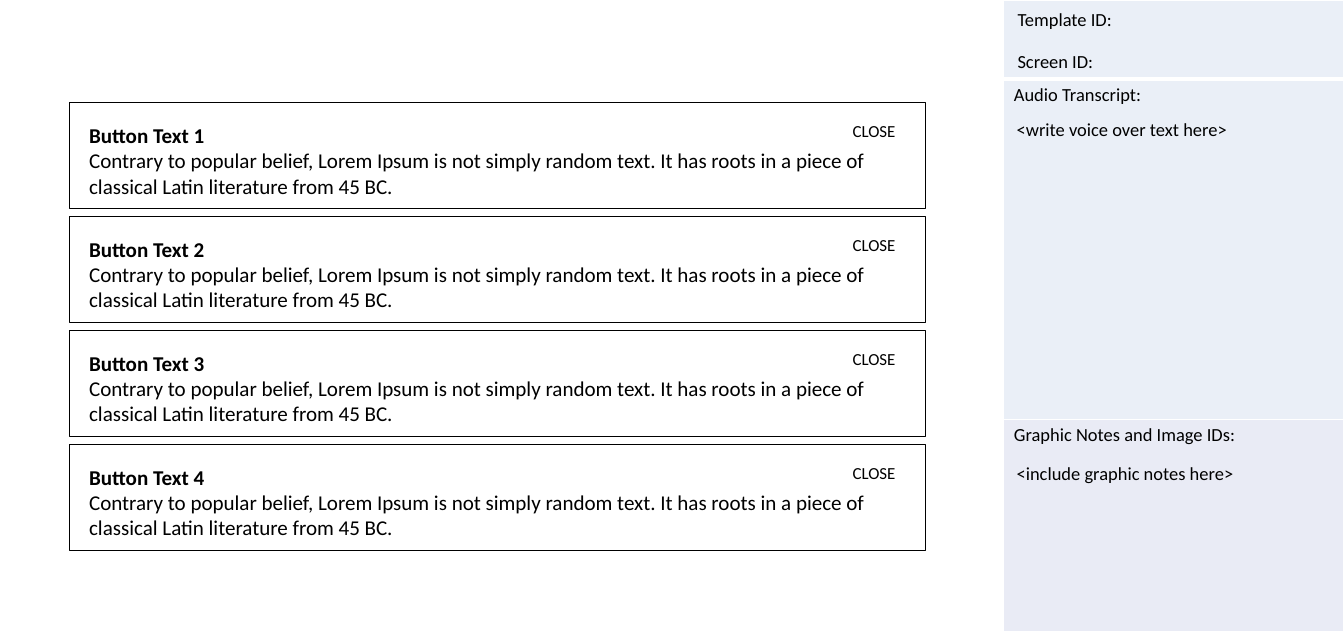
import collections

import pptx
import pptx.dml.color
import pptx.enum.shapes
import pptx.enum.text
import pptx.oxml.ns
import pptx.util
from lxml import etree

GRID = 0.1  # inches per grid column and row
FONT = "Calibri"
BODY_TEXT = (
    "Contrary to popular belief, Lorem Ipsum is not simply random text. "
    "It has roots in a piece of classical Latin literature from 45 BC."
)

Box = collections.namedtuple("Box", "left top width height")


def cells(count):
    return pptx.util.Inches(count * GRID)


def place(box):
    return [cells(length) for length in box]


def inside(box, left, top, width, height):
    return Box(box.left + left, box.top + top, width, height)


def color(value):
    return pptx.dml.color.RGBColor.from_string(value)


def add_span(para, text, size, bold=False):
    span = para.add_run()
    span.text = text
    span.font.name = FONT
    span.font.size = pptx.util.Pt(size)
    span.font.bold = bold
    span.font.color.rgb = color("000000")


def add_label(page, box, text, size=14):
    frame = page.shapes.add_textbox(*place(box)).text_frame
    frame.word_wrap = True
    add_span(frame.paragraphs[0], text, size)


def set_border(cell, side, width):
    properties = cell._tc.get_or_add_tcPr()
    line = etree.SubElement(properties, pptx.oxml.ns.qn("a:ln" + side))
    line.set("w", str(pptx.util.Pt(width)))
    fill = etree.SubElement(line, pptx.oxml.ns.qn("a:solidFill"))
    etree.SubElement(fill, pptx.oxml.ns.qn("a:srgbClr")).set("val", "FFFFFF")


def add_sidebar(page, box):
    # Three stacked panels: text, fill, height, top border, bottom border
    panels = [
        ("", "EAEFF7", 8.3, 1, 3),
        ("Audio Transcript:", "EAEFF7", 35.9, 3, 1),
        ("Graphic Notes and Image IDs:", "E9EBF5", 22.3, 1, 1),
    ]
    table = page.shapes.add_table(len(panels), 1, *place(box)).table
    table.first_row = False
    table.horz_banding = False
    table.columns[0].width = cells(box.width)
    for index, (text, fill, height, upper, lower) in enumerate(panels):
        table.rows[index].height = cells(height)
        cell = table.cell(index, 0)
        cell.margin_left = cell.margin_right = cells(1.1)
        cell.margin_top = cell.margin_bottom = cells(0.5)
        for side, width in (("L", 1), ("R", 1), ("T", upper), ("B", lower)):
            set_border(cell, side, width)
        cell.fill.solid()
        cell.fill.fore_color.rgb = color(fill)
        if text:
            add_span(cell.text_frame.paragraphs[0], text, 14)

    # Labels over the panels
    labels = [
        (0.5, 4.8, "Screen ID:"),
        (0.5, 0.4, "Template ID:"),
        (0.4, 11.9, "<write voice over text here>"),
        (0.4, 48.2, "<include graphic notes here>"),
    ]
    for left, top, text in labels:
        add_label(page, inside(box, left, top, box.width - left, 3.4), text)


def add_card(page, box, title):
    # Outlined panel with a title and body
    card = page.shapes.add_shape(
        pptx.enum.shapes.MSO_SHAPE.RECTANGLE, *place(box))
    card.shadow.inherit = False
    card.fill.solid()
    card.fill.fore_color.rgb = color("FFFFFF")
    card.line.color.rgb = color("000000")
    card.line.width = pptx.util.Pt(1)
    frame = card.text_frame
    frame.word_wrap = True
    frame.vertical_anchor = pptx.enum.text.MSO_ANCHOR.TOP
    frame.margin_left = frame.margin_right = cells(2.1)
    frame.margin_top = frame.margin_bottom = cells(2.1)
    add_span(frame.paragraphs[0], title, 16, bold=True)
    add_span(frame.add_paragraph(), BODY_TEXT, 16)
    for para in frame.paragraphs:
        para.alignment = pptx.enum.text.PP_ALIGN.LEFT

    # Close label in the top right corner
    add_label(page, inside(box, box.width - 8.7, 1.4, 8.7, 3.2), "CLOSE", 12.8)


def add_accordion(page, box, count=4, gap=0.8):
    height = (box.height - gap * (count - 1)) / count
    for index in range(count):
        card_box = inside(box, 0, index * (height + gap), box.width, height)
        add_card(page, card_box, f"Button Text {index + 1}")


def main():
    deck = pptx.Presentation()
    deck.slide_width = cells(141.7)
    deck.slide_height = cells(66.9)
    page = deck.slides.add_slide(deck.slide_layouts[6])
    add_sidebar(page, Box(105.8, 0, 35.9, 66.5))
    add_accordion(page, Box(7.3, 10.8, 90.3, 47.2))
    deck.save("out.pptx")


if __name__ == "__main__":
    main()
